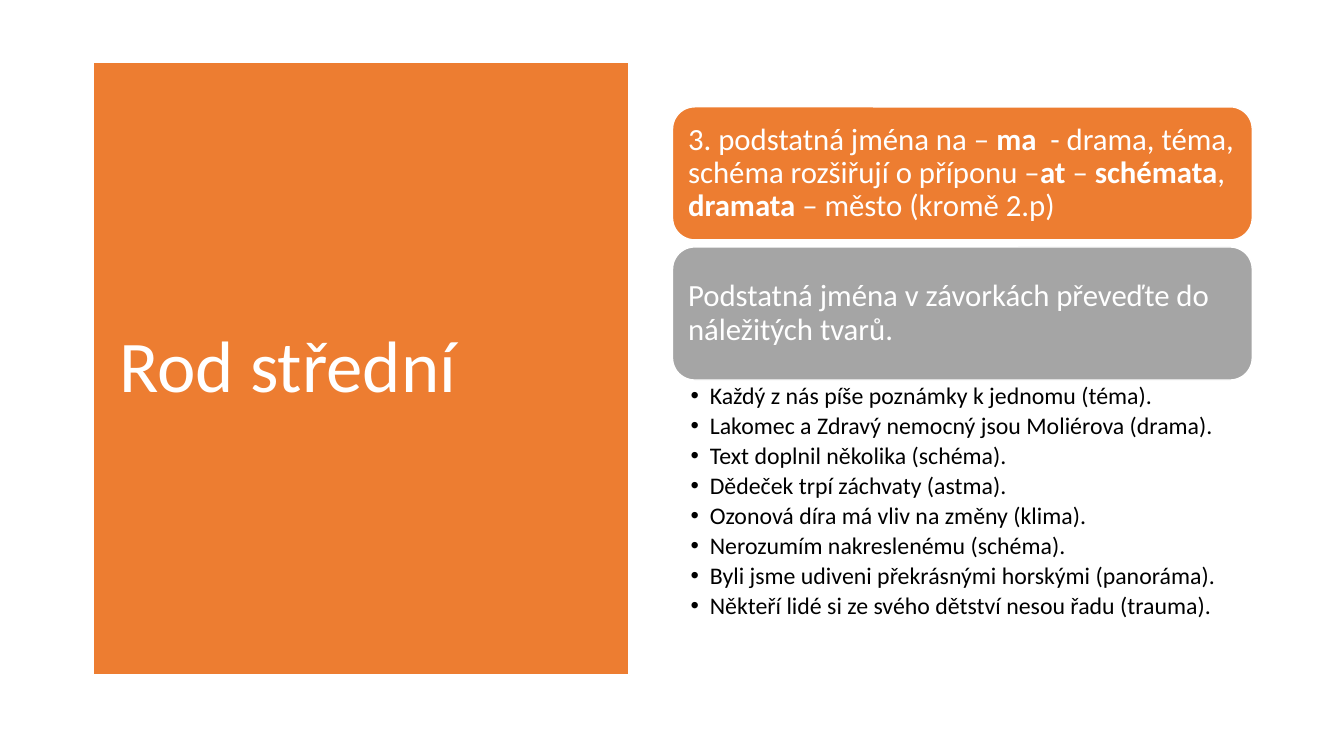
from dataclasses import dataclass

from lxml import etree
from pptx import Presentation
from pptx.dml.color import RGBColor
from pptx.enum.shapes import MSO_SHAPE
from pptx.enum.text import MSO_ANCHOR, MSO_AUTO_SIZE, PP_ALIGN
from pptx.oxml.ns import qn
from pptx.util import Inches, Pt

ROUNDED = MSO_SHAPE.ROUNDED_RECTANGLE
MIDDLE, TOP = MSO_ANCHOR.MIDDLE, MSO_ANCHOR.TOP
LEFT = PP_ALIGN.LEFT
NO_FIT = MSO_AUTO_SIZE.NONE


@dataclass(frozen=True)
class Theme:
    font: str = "Calibri"
    orange: RGBColor = RGBColor(0xED, 0x7D, 0x31)
    gray: RGBColor = RGBColor(0xA5, 0xA5, 0xA5)
    white: RGBColor = RGBColor(0xFF, 0xFF, 0xFF)
    black: RGBColor = RGBColor(0, 0, 0)
    title_size: int = 52
    rule_size: int = 22
    list_size: int = 17


THEME = Theme()


def set_frame(box, anchor, side, edge):
    """Wrap the text and set its anchor and its insets in inches."""
    frame = box.text_frame
    frame.word_wrap = True
    frame.auto_size = NO_FIT
    frame.vertical_anchor = anchor
    frame.margin_left = frame.margin_right = Inches(side)
    frame.margin_top = frame.margin_bottom = Inches(edge)
    return frame


def write_runs(para, runs, size, color):
    """Fill a paragraph with (text, bold) runs."""
    para.alignment = LEFT
    para.line_spacing = 0.9
    para.space_before = Pt(0)
    for text, bold in runs:
        span = para.add_run()
        span.text = text
        span.font.name = THEME.font
        span.font.size = Pt(size)
        span.font.bold = bold
        span.font.color.rgb = color


deck = Presentation()
deck.slide_width, deck.slide_height = Inches(13.33), Inches(7.5)
page = deck.slides.add_slide(deck.slide_layouts[1])

# Title panel
title = page.shapes.title
title.left, title.top = Inches(0.92), Inches(0.61)
title.width, title.height = Inches(5.32), Inches(6.09)
title.fill.solid()
title.fill.fore_color.rgb = THEME.orange
title.line.color.rgb = THEME.white
title.line.width = Pt(1.5)
title_frame = set_frame(title, MIDDLE, 0.1, 0.05)
write_runs(title_frame.paragraphs[0], [(" Rod střední", False)],
           THEME.title_size, THEME.white)

# Rule and task boxes
column_left, column_width = Inches(6.67), Inches(5.75)
rules = [
    (THEME.orange, [
        ("3. podstatná jména na – ", False), ("ma ", True),
        (" - drama, téma, schéma rozšiřují o příponu –", False),
        ("at ", True), ("– ", False), ("schémata", True), (", ", False),
        ("dramata", True), (" – město (kromě 2.p)", False),
    ]),
    (THEME.gray, [
        ("Podstatná jména v závorkách převeďte do náležitých tvarů.", False),
    ]),
]
for index, (color, runs) in enumerate(rules):
    box = page.shapes.add_shape(ROUNDED, column_left, Inches(1.06 + 1.39 * index),
                                column_width, Inches(1.32))
    box.shadow.inherit = False
    box.fill.solid()
    box.fill.fore_color.rgb = color
    box.line.color.rgb = THEME.white
    box.line.width = Pt(1)
    # The preset adds a corner inset of about 0.06 inch to these margins
    frame = set_frame(box, MIDDLE, 0.09, 0.09)
    write_runs(frame.paragraphs[0], runs, THEME.rule_size, THEME.white)

# Exercise list
sentences = [
    "Každý z nás píše poznámky k jednomu (téma).",
    "Lakomec a Zdravý nemocný jsou Moliérova (drama).",
    "Text doplnil několika (schéma).",
    "Dědeček trpí záchvaty (astma).",
    "Ozonová díra má vliv na změny (klima).",
    "Nerozumím nakreslenému (schéma).",
    "Byli jsme udiveni překrásnými horskými (panoráma).",
    "Někteří lidé si ze svého dětství nesou řadu (trauma).",
]
exercise = page.placeholders[1]
exercise.left, exercise.top = column_left, Inches(3.78)
exercise.width, exercise.height = column_width, Inches(2.54)
exercise_frame = set_frame(exercise, TOP, 0.18, 0.03)
for index, sentence in enumerate(sentences):
    para = exercise_frame.add_paragraph() if index else exercise_frame.paragraphs[0]
    para.level = 1
    write_runs(para, [(sentence, False)], THEME.list_size, THEME.black)
    para.space_after = Pt(3)
    properties = para._p.get_or_add_pPr()
    properties.set("marL", str(Inches(0.19)))
    properties.set("indent", str(-Inches(0.19)))
    etree.SubElement(properties, qn("a:buChar")).set("char", "•")

deck.save("out.pptx")
